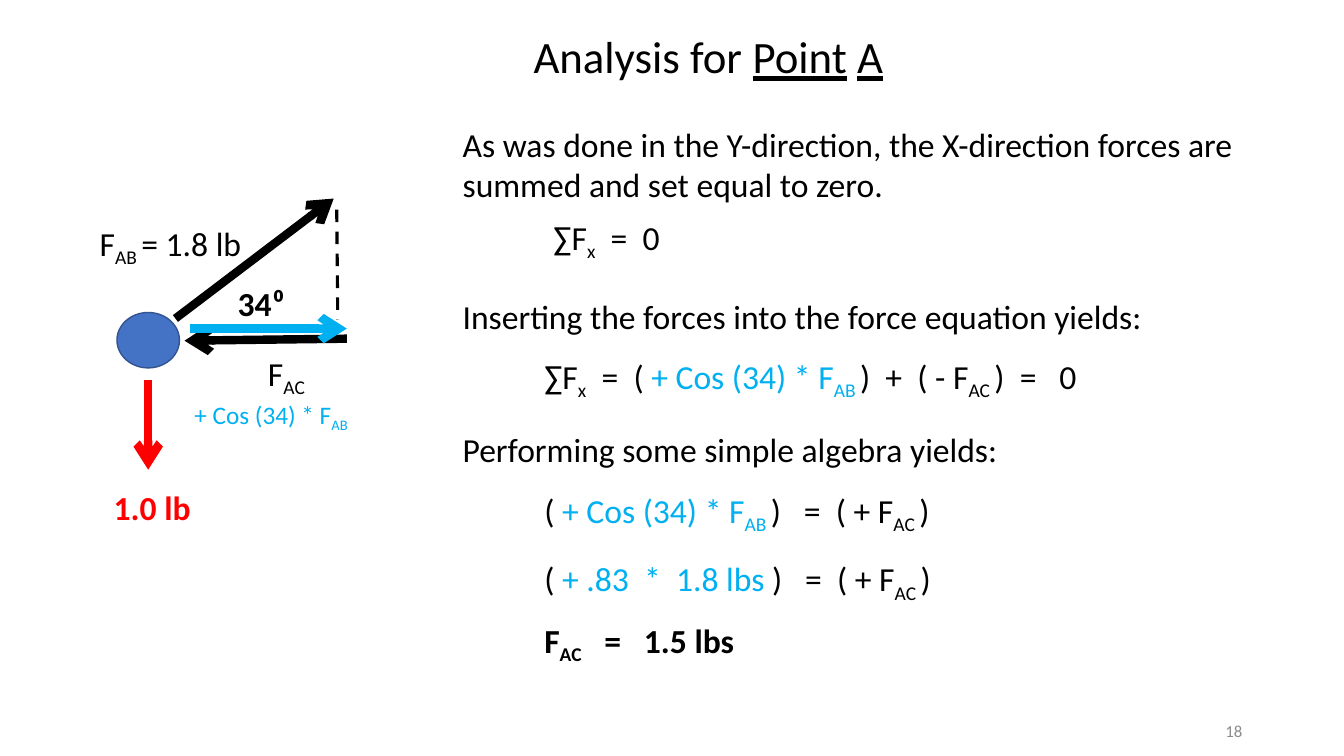
from dataclasses import dataclass

from lxml.etree import SubElement
from pptx import Presentation
from pptx.dml.color import RGBColor
from pptx.enum.dml import MSO_LINE_DASH_STYLE as Dash
from pptx.enum.shapes import MSO_CONNECTOR as Connector, MSO_SHAPE as Shape
from pptx.enum.text import MSO_ANCHOR as Anchor, PP_ALIGN as Align
from pptx.oxml.ns import qn
from pptx.util import Inches, Pt


@dataclass(frozen=True)
class Theme:
    font: str = "Calibri"
    black: str = "000000"
    red: str = "FF0000"
    sky: str = "00B0F0"
    gray: str = "8C8C8C"
    ball: str = "4472C4"
    ball_edge: str = "325491"
    title: int = 32
    body: int = 24
    label: int = 18
    footer: int = 12


THEME = Theme()


@dataclass(frozen=True)
class Piece:
    """A stretch of text with one look."""
    text: str
    color: str = THEME.black
    sub: bool = False
    underline: bool = False


def force(name, subscript, color=THEME.black):
    return [Piece(name, color), Piece(subscript, color, sub=True)]


def rgb(color):
    return RGBColor.from_string(color)


def add_text(page, left, top, width, pieces, height=0.5, size=THEME.body,
             bold=False, align=Align.LEFT, anchor=Anchor.TOP):
    box = page.shapes.add_textbox(
        Inches(left), Inches(top), Inches(width), Inches(height))
    frame = box.text_frame
    frame.word_wrap = True
    frame.vertical_anchor = anchor
    para = frame.paragraphs[0]
    para.alignment = align
    para.font.name = THEME.font
    para.font.size = Pt(size)
    para.font.bold = bold
    for piece in pieces:
        span = para.add_run()
        span.text = piece.text
        span.font.color.rgb = rgb(piece.color)
        if piece.underline:
            span.font.underline = True
        if piece.sub:
            span._r.get_or_add_rPr().set("baseline", "-25000")


def add_line(page, start, end, color, weight=6, dash=None, arrow=True):
    line = page.shapes.add_connector(
        Connector.STRAIGHT, *map(Inches, start + end))
    line.line.color.rgb = rgb(color)
    line.line.width = Pt(weight)
    if dash:
        line.line.dash_style = dash
    if arrow:
        SubElement(line.line._get_or_add_ln(), qn("a:tailEnd"), type="arrow")
    SubElement(line._element.spPr, qn("a:effectLst"))


def add_ball(page, left, top, width, height):
    ball = page.shapes.add_shape(
        Shape.OVAL, Inches(left), Inches(top), Inches(width), Inches(height))
    ball.shadow.inherit = False
    ball.fill.solid()
    ball.fill.fore_color.rgb = rgb(THEME.ball)
    ball.line.color.rgb = rgb(THEME.ball_edge)
    ball.line.width = Pt(1)


def add_force_diagram(page):
    add_ball(page, 1.16, 3.1, 0.62, 0.55)
    add_line(page, (1.47, 3.77), (1.47, 4.66), THEME.red)
    add_line(page, (3.44, 3.36), (1.83, 3.38), THEME.black)
    add_line(page, (1.74, 3.16), (3.31, 1.97), THEME.black)
    add_line(page, (1.88, 3.26), (3.44, 3.26), THEME.sky)
    add_line(page, (3.34, 2.08), (3.35, 3.17), THEME.black, 2.25,
             Dash.DASH, arrow=False)

    add_text(page, 1.03, 4.78, 1.1, [Piece("1.0 lb", THEME.red)], bold=True)
    add_text(page, 2.56, 3.45, 0.97, force("F", "AC"))
    add_text(page, 2.26, 2.76, 0.86, [Piece("34⁰")], bold=True)
    add_text(page, 0.89, 2.16, 1.84, force("F", "AB ") + [Piece("= 1.8 lb")])
    add_text(page, 1.83, 3.91, 1.98, force("+ Cos (34) * F", "AB", THEME.sky),
             height=0.4, size=THEME.label)


def add_explanations(page):
    left, width = 4.49, 8.27
    add_text(page, left, 1.18, width, [Piece(
        "As was done in the Y-direction, the X-direction forces are "
        "summed and set equal to zero.")], height=0.91)
    add_text(page, left, 2.89, width, [Piece(
        "Inserting the forces into the force equation yields:")])
    add_text(page, left, 4.21, width, [Piece(
        "Performing some simple algebra yields:")])


def add_equations(page):
    left, width = 5.3, 6.31
    sum_x = force("∑F", "x")
    pull_x = force("+ Cos (34) * F", "AB ", THEME.sky)
    equals_ac = force(")   =  ( + F", "AC ") + [Piece(")")]

    add_text(page, 5.39, 2.1, 2.71, sum_x + [Piece("  =  0")])
    add_text(page, left, 3.48, width,
             sum_x + [Piece("  =  ( ")] + pull_x
             + force(")  +  ( - F", "AC ") + [Piece(")  =   0")])
    add_text(page, left, 4.81, width, [Piece("( ")] + pull_x + equals_ac)
    add_text(page, left, 5.49, width,
             [Piece("( "), Piece("+ .83  *  1.8 lbs ", THEME.sky)] + equals_ac)
    add_text(page, left, 6.1, width,
             force("F", "AC") + [Piece("   =   1.5 lbs")], bold=True)


def main():
    deck = Presentation()
    deck.slide_width, deck.slide_height = Inches(13.33), Inches(7.5)
    page = deck.slides.add_slide(deck.slide_layouts[6])

    add_text(page, 3.09, 0.24, 7.87,
             [Piece("Analysis for "), Piece("Point", underline=True),
              Piece(" "), Piece("A", underline=True)],
             height=0.64, size=THEME.title, align=Align.CENTER)
    add_force_diagram(page)
    add_explanations(page)
    add_equations(page)
    add_text(page, 9.42, 7.05, 3, [Piece("18", THEME.gray)], height=0.4,
             size=THEME.footer, align=Align.RIGHT, anchor=Anchor.MIDDLE)

    deck.save("out.pptx")


if __name__ == "__main__":
    main()
